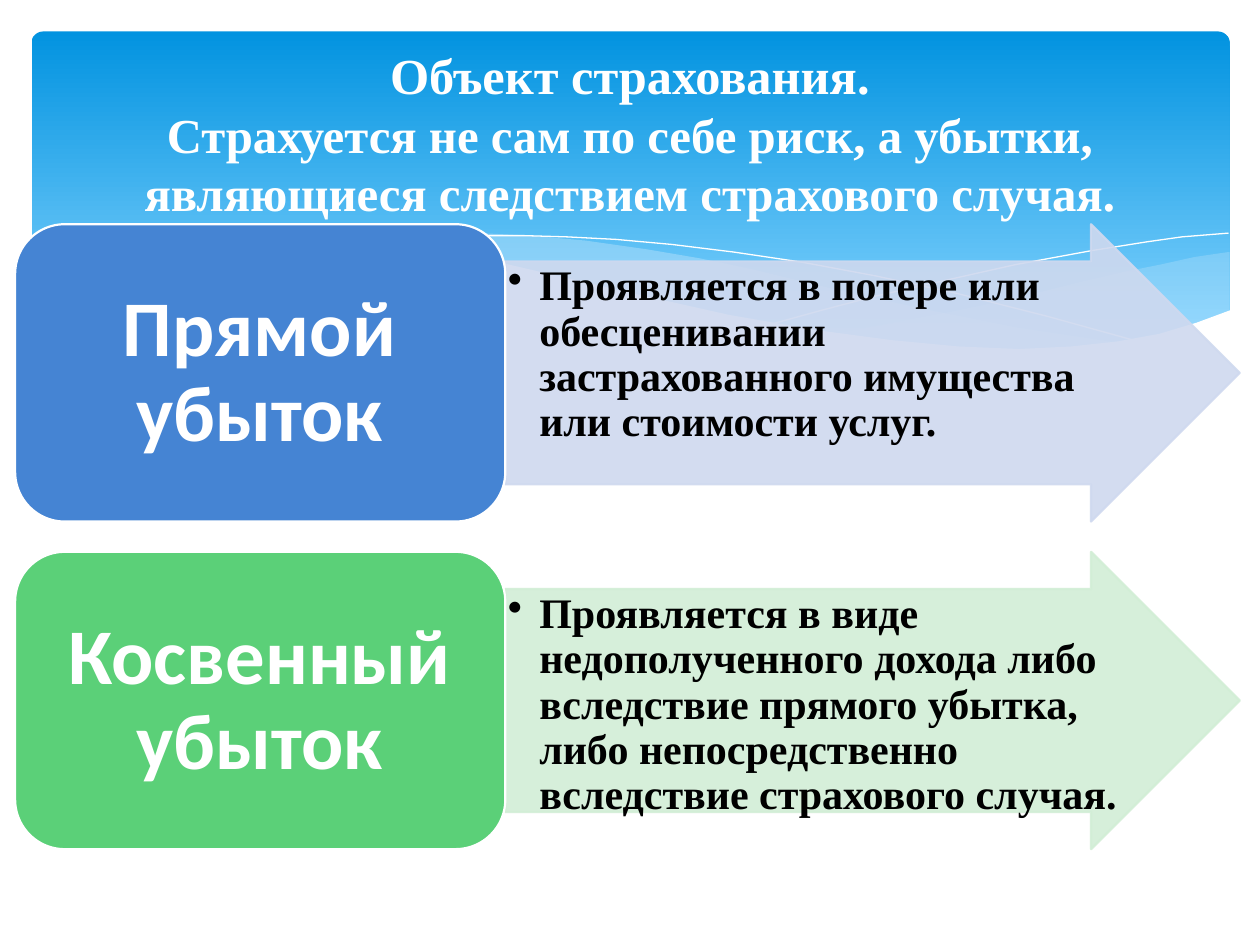
from lxml.etree import SubElement
from pptx import Presentation
from pptx.dml.color import RGBColor
from pptx.enum.shapes import MSO_SHAPE as SHAPE
from pptx.enum.text import MSO_ANCHOR as ANCHOR, PP_ALIGN as ALIGN
from pptx.oxml.ns import qn
from pptx.util import Inches, Pt

SERIF = "Times New Roman"

# Wave outlines, in hundredths of an inch
RIGHT_WAVE = [
    (975, 200), (948, 204), (921, 210), (891, 216), (861, 223), (805, 237),
    (753, 248), (706, 257), (661, 265), (691, 269), (719, 272), (745, 275),
    (781, 277), (814, 278), (844, 277), (872, 274), (897, 270), (921, 265),
    (942, 259), (963, 252), (976, 247), (976, 200)]
MIDDLE_WAVE = [
    (893, 273), (866, 269), (807, 260), (741, 247), (668, 231), (598, 214),
    (555, 205), (514, 198), (465, 191), (420, 187), (380, 185), (344, 186),
    (313, 188), (286, 191), (323, 196), (362, 203), (404, 211), (449, 222),
    (530, 240), (601, 255), (665, 266), (722, 274), (773, 277), (818, 278),
    (857, 277)]
LONG_CURVE = [
    (309, 195), (328, 192), (353, 189), (387, 187), (416, 187), (450, 188),
    (489, 190), (533, 194), (582, 200), (636, 208), (695, 219), (760, 233),
    (831, 251), (907, 272)]
SHORT_CURVE = [
    (613, 257), (653, 246), (695, 235), (748, 223), (806, 210), (866, 199),
    (910, 192), (938, 188), (975, 185)]
WHITE_WAVE = [
    (977, 246), (950, 256), (920, 265), (887, 271), (850, 275), (809, 277),
    (761, 275), (708, 270), (648, 262), (579, 250), (503, 233), (447, 220),
    (391, 207), (340, 197), (292, 190), (250, 186), (211, 184), (177, 184),
    (146, 185), (119, 187), (95, 191), (76, 195), (59, 199), (46, 203),
    (36, 207), (23, 213), (23, 329), (977, 329)]

LOSSES = [
    ("Прямой убыток", "4584D3", "CFD9EF",
     "Проявляется в потере или обесценивании застрахованного имущества "
     "или стоимости услуг."),
    ("Косвенный убыток", "5BD078", "D2EED6",
     "Проявляется в виде недополученного дохода либо вследствие прямого "
     "убытка, либо непосредственно вследствие страхового случая."),
]


def rgb(color):
    return RGBColor.from_string(color)


def paint(fill, color, alpha=100):
    """Set a solid fill with an opacity in percent."""
    fill.solid()
    fill.fore_color.rgb = rgb(color)
    if alpha < 100:
        # The solid colour element is the only one of its kind under this fill
        node = fill._xPr.find(qn("a:solidFill")).find(qn("a:srgbClr"))
        SubElement(node, qn("a:alpha"), val=str(alpha * 1000))


def style(s, fill=None, line=None, width=1.25, alpha=100):
    s.shadow.inherit = False
    if fill:
        paint(s.fill, fill, alpha)
    else:
        s.fill.background()
    if line:
        s.line.width = Pt(width)
        paint(s.line.fill, line, alpha)
    else:
        s.line.fill.background()


def add_shape(slide, kind, box, adjust=(), **look):
    s = slide.shapes.add_shape(kind, *map(Inches, box))
    for i, value in enumerate(adjust):
        s.adjustments[i] = value
    style(s, **look)
    return s


def add_wave(slide, points, close=True, **look):
    builder = slide.shapes.build_freeform(*points[0], scale=Inches(0.01))
    builder.add_line_segments(points[1:], close=close)
    style(builder.convert_to_shape(), **look)


def add_text(slide, box, lines, font=SERIF, color="FFFFFF", align=ALIGN.CENTER,
             anchor=ANCHOR.MIDDLE, insets=(0.1, 0.05), spacing=1, bullet=False):
    """Write (text, size) lines as one bold paragraph with line breaks."""
    tf = slide.shapes.add_textbox(*map(Inches, box)).text_frame
    tf.word_wrap = True
    tf.vertical_anchor = anchor
    tf.margin_left = tf.margin_right = Inches(insets[0])
    tf.margin_top = tf.margin_bottom = Inches(insets[1])
    p = tf.paragraphs[0]
    p.alignment = align
    p.line_spacing = spacing
    if bullet:
        pPr = p._p.get_or_add_pPr()
        pPr.set("marL", str(Inches(0.25)))
        pPr.set("indent", str(-Inches(0.25)))
        SubElement(pPr, qn("a:buChar"), char="•")
    for i, (text, size) in enumerate(lines):
        if i:
            p.add_line_break()
        r = p.add_run()
        r.text = text
        r.font.name = font
        r.font.size = Pt(size)
        r.font.bold = True
        r.font.color.rgb = rgb(color)


def add_banner(slide):
    s = add_shape(slide, SHAPE.ROUNDED_RECTANGLE, (0.25, 0.25, 9.51, 2.7), [0.034])
    s.fill.gradient()
    s.fill.gradient_angle = 270
    stops = [(0, "0293E0"), (0.9, "83D3FE")]
    for stop, (position, color) in zip(s.fill.gradient_stops, stops):
        stop.position = position
        stop.color.rgb = rgb(color)
    add_wave(slide, RIGHT_WAVE, fill="C6E7FC", alpha=29)
    add_wave(slide, MIDDLE_WAVE, fill="C6E7FC", alpha=40)
    for curve in (LONG_CURVE, SHORT_CURVE):
        add_wave(slide, curve, close=False, line="FFFFFF", width=0)
    add_wave(slide, WHITE_WAVE, fill="FFFFFF")


def add_loss(slide, top, name, color, tint, description):
    add_shape(slide, SHAPE.RIGHT_ARROW, (4.01, top, 5.83, 2.36), [0.75, 0.5],
              fill=tint, line=tint, alpha=90)
    add_text(slide, (4.01, top + 0.3, 4.95, 1.77), [(description, 24)],
             color="000000", align=ALIGN.LEFT, anchor=ANCHOR.TOP,
             insets=(0.02, 0.02), spacing=0.9, bullet=True)
    add_shape(slide, SHAPE.ROUNDED_RECTANGLE, (0.12, top, 3.89, 2.36),
              fill=color, line="FFFFFF")
    add_text(slide, (0.23, top + 0.12, 3.66, 2.13), [(name, 45)],
             font="Calibri", insets=(0.19, 0.09), spacing=0.9)


def main():
    prs = Presentation()
    prs.slide_width, prs.slide_height = Inches(10), Inches(7.5)
    slide = prs.slides.add_slide(prs.slide_layouts[6])
    add_banner(slide)
    for i, loss in enumerate(LOSSES):
        add_loss(slide, 1.78 + 2.6 * i, *loss)
    add_text(slide, (0.5, 0.37, 9, 1.37), [
        ("Объект страхования.", 28.8),
        ("Страхуется не сам по себе риск, а убытки, "
         "являющиеся следствием страхового случая.", 27.9)])
    prs.save("out.pptx")


if __name__ == "__main__":
    main()
